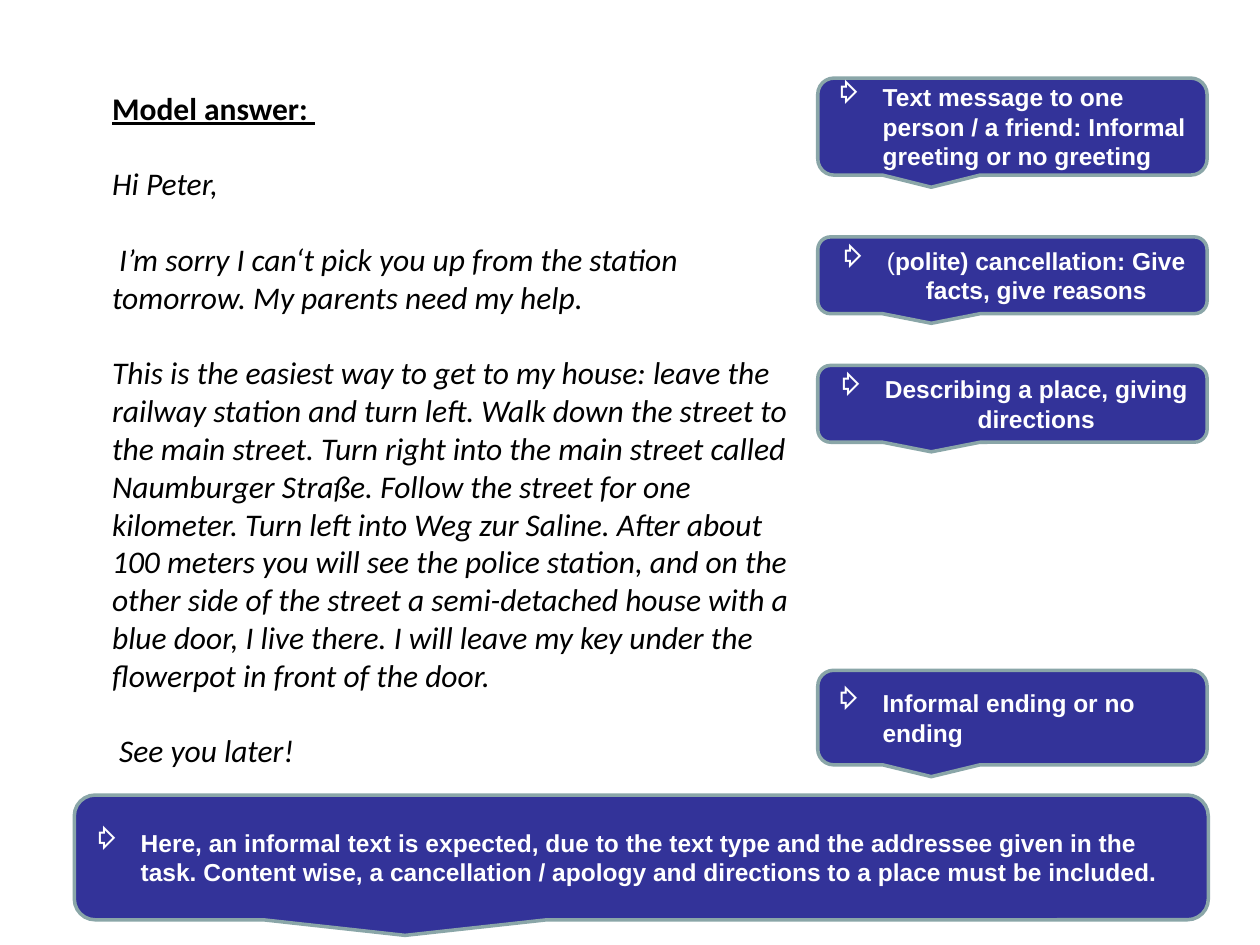
from lxml.etree import SubElement
from pptx import Presentation
from pptx.dml.color import RGBColor
from pptx.enum.shapes import MSO_SHAPE
from pptx.enum.text import MSO_ANCHOR, PP_ALIGN
from pptx.oxml.ns import qn
from pptx.util import Inches, Pt

COLORS = {"text": "000000", "callout": "333399", "border": "8AA6A8",
          "callout_text": "FFFFFF", "paper": "FFFFFF"}

LETTER = [
    "Model answer: ",
    "Hi Peter,",
    " I’m sorry I can‘t pick you up from the station tomorrow. "
    "My parents need my help.",
    "This is the easiest way to get to my house: leave the railway station and "
    "turn left. Walk down the street to the main street. Turn right into the "
    "main street called Naumburger Straße. Follow the street for one kilometer. "
    "Turn left into Weg zur Saline. After about 100 meters you will see the "
    "police station, and on the other side of the street a semi-detached house "
    "with a blue door, I live there. I will leave my key under the flowerpot in "
    "front of the door.",
    " See you later!",
]

# Side callouts share left edge and width: top, height, alignment, text runs
SIDE_LEFT, SIDE_WIDTH = 6.49, 3.09
SIDE_CALLOUTS = [
    (0.62, 0.77, PP_ALIGN.LEFT,
     [("Text message to one person / a friend: Informal greeting or no greeting", True)]),
    (1.88, 0.61, PP_ALIGN.CENTER,
     [("(", False), ("polite) cancellation: Give facts, give reasons", True)]),
    (2.9, 0.61, PP_ALIGN.CENTER,
     [("Describing a place, giving directions", True)]),
    (5.32, 0.75, PP_ALIGN.LEFT,
     [("Informal ending or no ending", True)]),
]
SUMMARY = ("Here, an informal text is expected, due to the text type and the "
           "addressee given in the task. Content wise, a cancellation / apology "
           "and directions to a place must be included.")


def color(name):
    return RGBColor.from_string(COLORS[name])


def add_filled_shape(slide, kind, box, fill):
    shape = slide.shapes.add_shape(kind, *(Inches(length) for length in box))
    shape.shadow.inherit = False
    shape.fill.solid()
    shape.fill.fore_color.rgb = color(fill)
    text_frame = shape.text_frame
    text_frame.word_wrap = True
    text_frame.vertical_anchor = MSO_ANCHOR.MIDDLE
    return shape


def format_run(run, font_name, size, color_name, bold=False):
    run.font.name = font_name
    run.font.size = Pt(size)
    run.font.bold = bold
    run.font.color.rgb = color(color_name)


def add_letter(slide):
    shape = add_filled_shape(slide, MSO_SHAPE.RECTANGLE, (0.89, 0.68, 5.6, 5.45), "paper")
    shape.line.fill.background()
    text_frame = shape.text_frame
    text_frame.margin_left = text_frame.margin_right = 0
    text_frame.margin_top = text_frame.margin_bottom = 0
    text_frame.text = "\n".join(LETTER)
    for index, paragraph in enumerate(text_frame.paragraphs):
        is_heading = index == 0
        paragraph.alignment = PP_ALIGN.LEFT
        paragraph.space_before = Pt(0 if is_heading else 21.6)
        run = paragraph.runs[0]
        format_run(run, "Calibri", 18, "text", bold=is_heading)
        run.font.underline = is_heading
        run.font.italic = not is_heading


def add_arrow_bullet(paragraph):
    properties = paragraph._p.get_or_add_pPr()
    properties.set("marL", str(Inches(0.38)))
    properties.set("indent", str(Inches(-0.38)))
    SubElement(properties, qn("a:buChar"), char="⇨")


def add_callout(slide, box, alignment, runs):
    shape = add_filled_shape(slide, MSO_SHAPE.ROUNDED_RECTANGULAR_CALLOUT, box, "callout")
    shape.line.color.rgb = color("border")
    shape.line.width = Pt(2)
    paragraph = shape.text_frame.paragraphs[0]
    paragraph.alignment = alignment
    add_arrow_bullet(paragraph)
    for text, bold in runs:
        run = paragraph.add_run()
        run.text = text
        format_run(run, "Arial", 14, "callout_text", bold)


def main():
    presentation = Presentation()
    presentation.slide_width = Inches(10)
    presentation.slide_height = Inches(7.5)
    slide = presentation.slides.add_slide(presentation.slide_layouts[6])

    # Model answer
    add_letter(slide)

    # Comments beside the answer
    for top, height, alignment, runs in SIDE_CALLOUTS:
        add_callout(slide, (SIDE_LEFT, top, SIDE_WIDTH, height), alignment, runs)

    # Summary below the answer
    add_callout(slide, (0.59, 6.31, 9, 0.99), PP_ALIGN.LEFT, [(SUMMARY, True)])

    presentation.save("out.pptx")


if __name__ == "__main__":
    main()
